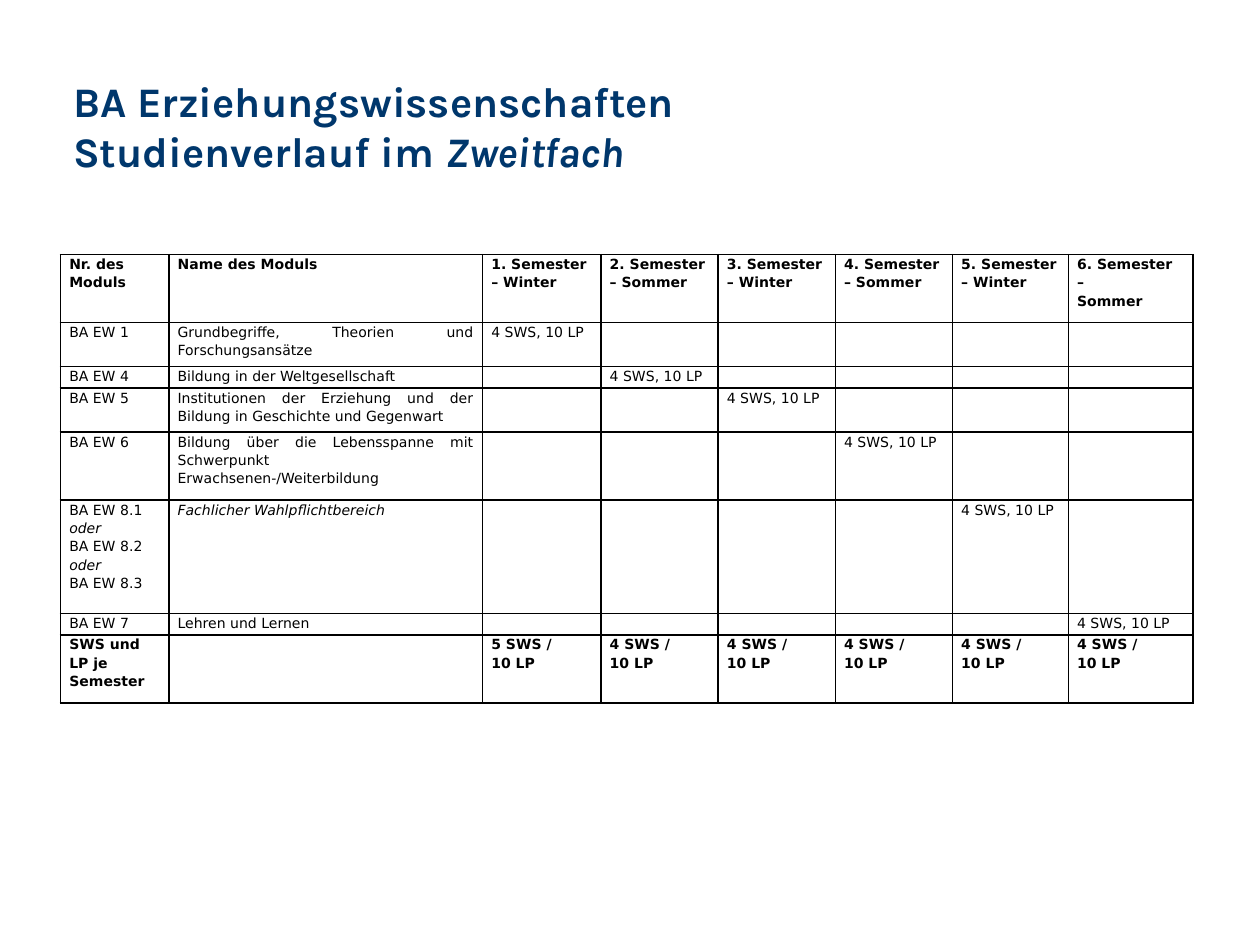
"""Build the study plan slide for education science as a second subject."""
from dataclasses import dataclass

from lxml import etree
from pptx import Presentation
from pptx.dml.color import RGBColor
from pptx.enum.text import PP_ALIGN
from pptx.oxml.ns import qn
from pptx.util import Inches, Pt

JUSTIFY = PP_ALIGN.JUSTIFY
LEFT = PP_ALIGN.LEFT


@dataclass(frozen=True)
class Theme:
    title_font: str = "Karla"
    table_font: str = "DejaVu Sans"
    title_color: str = "00376C"
    table_color: str = "000000"
    title_size: float = 24
    table_size: float = 8
    line_spacing: float = 10.5
    border_width: float = 1


@dataclass(frozen=True)
class Module:
    number: str
    name: str
    semester: int
    height: float
    italic_name: bool = False


THEME = Theme()
SEMESTERS = 6
COLUMN_WIDTHS = (0.86, 2.49, 0.94, 0.93, 0.93, 0.93, 0.92, 0.99)
SUMMARY_HEIGHT = 0.54
ALTERNATIVE = "oder"
WORKLOAD = "4 SWS, 10 LP"
HEADINGS = (
    "Nr. des Moduls",
    "Name des Moduls",
    "1. Semester – Winter",
    "2. Semester – Sommer",
    "3. Semester – Winter",
    "4. Semester – Sommer",
    "5. Semester – Winter",
    "6. Semester –\nSommer",
)
MODULES = (
    Module("BA EW 1", "Grundbegriffe, Theorien und Forschungsansätze", 1, 0.35),
    Module("BA EW 4", "Bildung in der Weltgesellschaft", 2, 0.17),
    Module("BA EW 5", "Institutionen der Erziehung und der Bildung in Geschichte und Gegenwart", 3, 0.35),
    Module("BA EW 6", "Bildung über die Lebensspanne mit Schwerpunkt Erwachsenen-/Weiterbildung", 4, 0.54),
    Module("BA EW 8.1\noder\nBA EW 8.2\noder\nBA EW 8.3", "Fachlicher Wahlpflichtbereich", 5, 0.9, True),
    Module("BA EW 7", "Lehren und Lernen", 6, 0.17),
)
TOTALS = ("SWS und LP je Semester", "", "5 SWS /\n10 LP") + ("4 SWS /\n10 LP",) * (SEMESTERS - 1)


def style_font(font, name: str, size: float, color: str, bold: bool) -> None:
    font.name = name
    font.size = Pt(size)
    font.color.rgb = RGBColor.from_string(color)
    font.bold = bold


def add_title(slide) -> None:
    box = slide.shapes.add_textbox(Inches(0.5), Inches(0.56), Inches(9), Inches(0.9))
    frame = box.text_frame
    frame.word_wrap = True
    frame.margin_left = frame.margin_right = Inches(0.08)
    frame.margin_top = frame.margin_bottom = Inches(0.04)
    paragraph = frame.paragraphs[0]
    style_font(paragraph.font, THEME.title_font, THEME.title_size, THEME.title_color, True)
    paragraph.add_run().text = "BA Erziehungswissenschaften"
    paragraph.add_line_break()
    paragraph.add_run().text = "Studienverlauf im "
    emphasis = paragraph.add_run()
    emphasis.text = "Zweitfach"
    emphasis.font.italic = True


def add_borders(cell) -> None:
    properties = cell._tc.get_or_add_tcPr()
    for side in ("a:lnL", "a:lnR", "a:lnT", "a:lnB"):
        line = etree.SubElement(properties, qn(side), w=str(Pt(THEME.border_width)))
        fill = etree.SubElement(line, qn("a:solidFill"))
        etree.SubElement(fill, qn("a:srgbClr"), val=THEME.table_color)


def fill_cell(cell, text: str, bold: bool = False, italic: bool = False, alignment=LEFT) -> None:
    add_borders(cell)
    cell.fill.background()
    cell.margin_left = cell.margin_right = Inches(0.07)
    cell.margin_top = cell.margin_bottom = Inches(0)
    cell.text_frame.text = text
    for paragraph in cell.text_frame.paragraphs:
        paragraph.alignment = alignment
        paragraph.line_spacing = Pt(THEME.line_spacing)
        style_font(paragraph.font, THEME.table_font, THEME.table_size, THEME.table_color, bold)
        paragraph.font.italic = italic or paragraph.text == ALTERNATIVE


def fill_module(table, row: int, module: Module) -> None:
    table.rows[row].height = Inches(module.height)
    fill_cell(table.cell(row, 0), module.number)
    fill_cell(table.cell(row, 1), module.name, italic=module.italic_name, alignment=JUSTIFY)
    for semester in range(1, SEMESTERS + 1):
        fill_cell(table.cell(row, semester + 1), WORKLOAD if semester == module.semester else "")


def fill_summary(table, row: int, texts: tuple[str, ...]) -> None:
    table.rows[row].height = Inches(SUMMARY_HEIGHT)
    for column, text in enumerate(texts):
        fill_cell(table.cell(row, column), text, bold=True)


def add_plan(slide) -> None:
    row_count = len(MODULES) + 2
    frame = slide.shapes.add_table(
        row_count, len(COLUMN_WIDTHS), Inches(0.48), Inches(2.02), Inches(9), Inches(3.54)
    )
    table = frame.table
    for column, width in zip(table.columns, COLUMN_WIDTHS):
        column.width = Inches(width)
    table.first_row = table.horz_banding = False
    fill_summary(table, 0, HEADINGS)
    for row, module in enumerate(MODULES, start=1):
        fill_module(table, row, module)
    fill_summary(table, row_count - 1, TOTALS)


def main() -> None:
    presentation = Presentation()
    presentation.slide_width = Inches(10)
    presentation.slide_height = Inches(7.5)
    slide = presentation.slides.add_slide(presentation.slide_layouts[6])
    add_title(slide)
    add_plan(slide)
    presentation.save("out.pptx")


if __name__ == "__main__":
    main()
